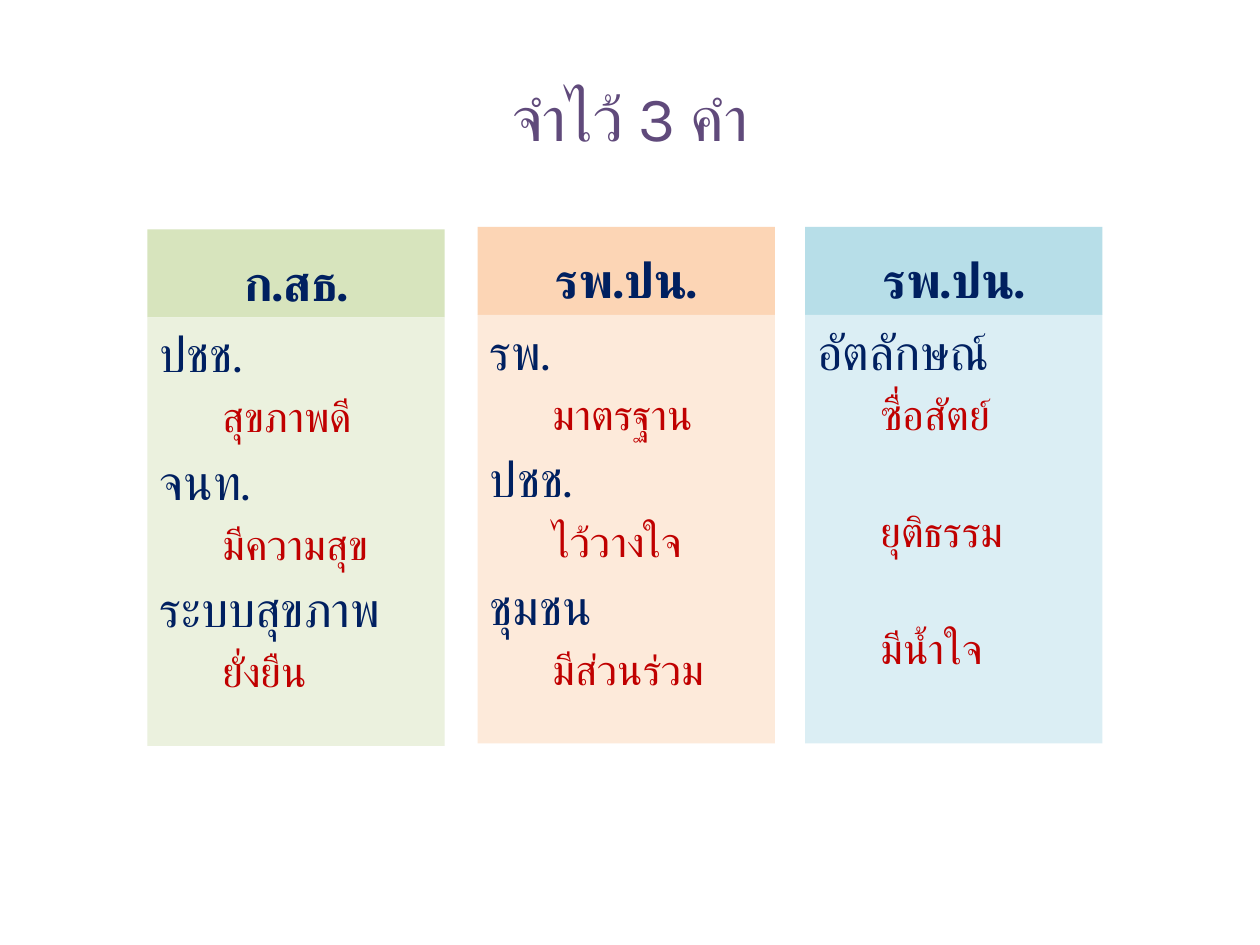
from dataclasses import dataclass

from lxml import etree
from pptx import Presentation
from pptx.dml.color import RGBColor
from pptx.enum import shapes, text
from pptx.oxml.ns import qn
from pptx.util import Inches, Pt


@dataclass(frozen=True)
class Theme:
    font: str = "Karla"
    title: str = "604A7B"
    navy: str = "002060"
    red: str = "C00000"
    big: int = 36
    mid: int = 28
    small: int = 24
    gap: float = 0.2  # space before, as a share of the type size
    skip: int = 38  # space before in points where words stand apart


THEME = Theme()

# left, top, head fill, body fill, head, lines of (level, text), words apart
CARDS = [
    (1.17, 1.82, "D7E4BD", "EBF1DE", "ก.สธ.",
     [(0, "ปชช."), (1, "สุขภาพดี"), (0, "จนท."), (1, "มีความสุข"),
      (0, "ระบบสุขภาพ"), (1, "ยั่งยืน")], False),
    (3.79, 1.8, "FCD5B5", "FDEADA", "รพ.ปน.",
     [(0, "รพ."), (1, "มาตรฐาน"), (0, "ปชช."), (1, "ไว้วางใจ"),
      (0, "ชุมชน"), (1, "มีส่วนร่วม")], False),
    (6.39, 1.8, "B7DEE8", "DBEEF4", "รพ.ปน.",
     [(0, "อัตลักษณ์"), (1, "ซื่อสัตย์"), (1, "ยุติธรรม"), (1, "มีน้ำใจ")], True),
]
WIDTH, HEAD, BODY = 2.36, 0.7, 3.4


def style(para, size, color, bold=False):
    """Format the runs, for Latin and Thai script alike."""
    for run in para.runs:
        font = run.font
        font.size, font.bold = Pt(size), bold
        font.color.rgb = RGBColor.from_string(color)
        font.name = THEME.font
        thai = etree.SubElement(font._element, qn("a:cs"))
        thai.set("typeface", THEME.font)


def panel(slide, left, top, high, fill, anchor):
    """Add a plain filled box and return its text frame."""
    box = slide.shapes.add_shape(
        shapes.MSO_SHAPE.RECTANGLE,
        Inches(left), Inches(top), Inches(WIDTH), Inches(high))
    box.shadow.inherit = False
    box.fill.solid()
    box.fill.fore_color.rgb = RGBColor.from_string(fill)
    box.line.fill.background()
    frame = box.text_frame
    frame.word_wrap = True
    frame.vertical_anchor = anchor
    return frame


def add_title(slide, left, top, width, high):
    title = slide.shapes.title
    title.left, title.top = Inches(left), Inches(top)
    title.width, title.height = Inches(width), Inches(high)
    frame = title.text_frame
    frame.text = "จำไว้ 3 คำ"
    frame.vertical_anchor = text.MSO_ANCHOR.MIDDLE
    frame.paragraphs[0].alignment = text.PP_ALIGN.CENTER
    style(frame.paragraphs[0], THEME.big, THEME.title)


def add_head(slide, left, top, fill, label):
    frame = panel(slide, left, top, HEAD, fill, text.MSO_ANCHOR.BOTTOM)
    frame.text = label
    frame.paragraphs[0].alignment = text.PP_ALIGN.CENTER
    style(frame.paragraphs[0], THEME.mid, THEME.navy, bold=True)


def add_body(slide, left, top, fill, lines, apart):
    frame = panel(slide, left, top, BODY, fill, text.MSO_ANCHOR.TOP)
    frame.text = "\n".join(words for _, words in lines)
    last = 0
    for i, (para, (level, _)) in enumerate(zip(frame.paragraphs, lines)):
        size, color = ((THEME.mid, THEME.navy), (THEME.small, THEME.red))[level]
        margin, indent = ((0.38, -0.38), (0.81, -0.31))[level]
        para.level = level
        para.alignment = text.PP_ALIGN.LEFT
        props = para._p.get_or_add_pPr()
        props.set("marL", str(Inches(margin)))
        props.set("indent", str(Inches(indent)))
        if i:
            wide = apart and level == last
            para.space_before = Pt(THEME.skip if wide else size * THEME.gap)
        style(para, size, color)
        last = level


def add_card(slide, left, top, dark, light, label, lines, apart):
    add_head(slide, left, top, dark, label)
    add_body(slide, left, top + HEAD, light, lines, apart)


def main():
    deck = Presentation()
    deck.slide_width, deck.slide_height = Inches(10), Inches(7.5)
    slide = deck.slides.add_slide(deck.slide_layouts[5])
    add_title(slide, 0.5, 0.3, 9, 1.25)
    for card in CARDS:
        add_card(slide, *card)
    deck.save("out.pptx")


if __name__ == "__main__":
    main()
